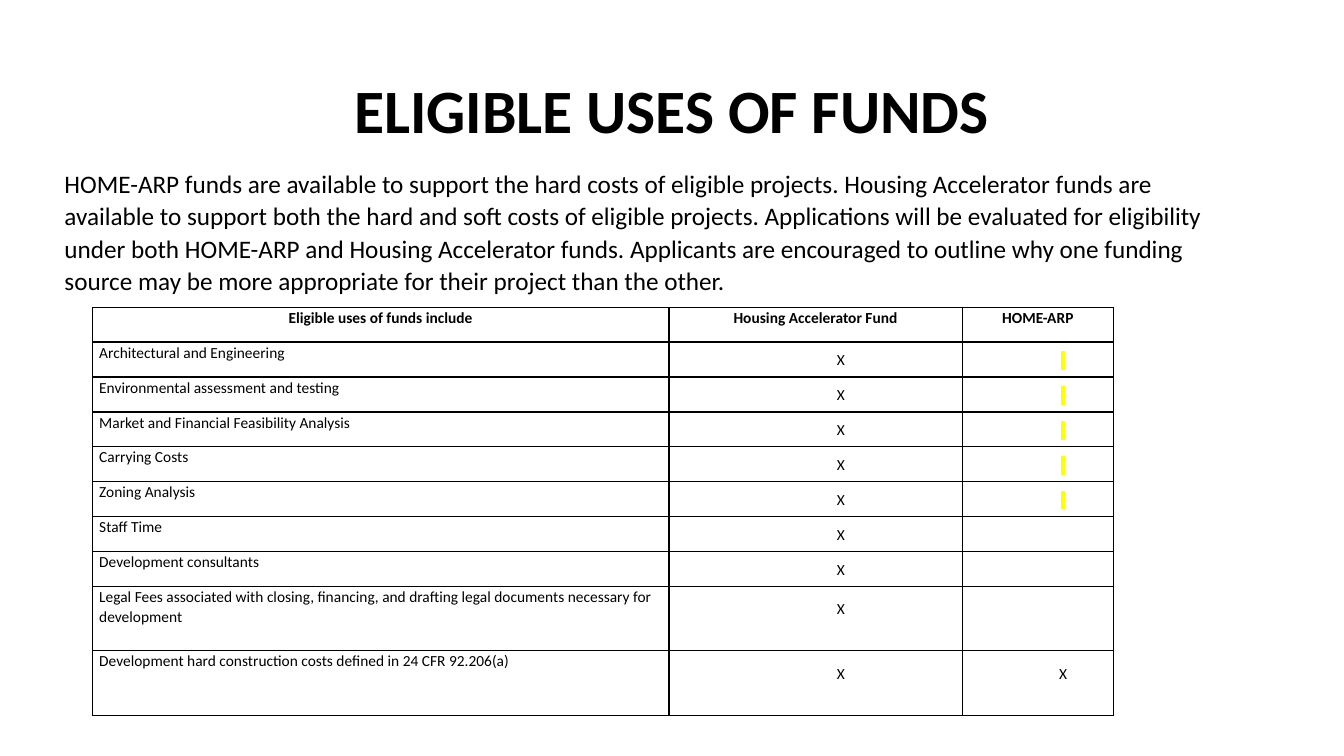
from dataclasses import dataclass

from lxml.etree import SubElement
from pptx import Presentation
from pptx.dml.color import RGBColor as RGB
from pptx.enum.text import MSO_ANCHOR as Anchor
from pptx.enum.text import MSO_AUTO_SIZE as AutoSize
from pptx.enum.text import PP_ALIGN as Align
from pptx.oxml import parse_xml
from pptx.oxml.ns import nsdecls, qn
from pptx.util import Cm, Pt


@dataclass(frozen=True)
class Theme:
    font: str = "Calibri"
    ink: str = "000000"
    mark: str = "FFFF00"
    title: float = 44
    body: float = 18
    cell: float = 11
    border: float = 1
    leading: float = 1.07


@dataclass(frozen=True)
class Use:
    name: str
    home_arp: str = ""
    tall: bool = False


THEME = Theme()
TITLE = "ELIGIBLE USES OF FUNDS"
INTRO = (
    "HOME-ARP funds are available to support the hard costs of eligible projects. "
    "Housing Accelerator funds are available to support both the hard and soft costs "
    "of eligible projects. Applications will be evaluated for eligibility under both "
    "HOME-ARP and Housing Accelerator funds. Applicants are encouraged to outline why "
    "one funding source may be more appropriate for their project than the other."
)
HEADERS = ("Eligible uses of funds include", "Housing Accelerator Fund", "HOME-ARP")
MARK = " "  # no-break space that carries the highlight
USES = (
    Use("Architectural and Engineering", MARK),
    Use("Environmental assessment and testing", MARK),
    Use("Market and Financial Feasibility Analysis", MARK),
    Use("Carrying Costs", MARK),
    Use("Zoning Analysis", MARK),
    Use("Staff Time"),
    Use("Development consultants"),
    Use("Legal Fees associated with closing, financing, and drafting legal "
        "documents necessary for development", tall=True),
    Use("Development hard construction costs defined in 24 CFR 92.206(a)", "X", True),
)
COL_WIDTHS = (Cm(14.53), Cm(7.39), Cm(3.81))
ROW, TALL_ROW = Cm(0.88), Cm(1.62)
CELL_INSET, X_INDENT, TALL_INSET = Cm(0.17), Cm(1.27), Cm(0.5)


def apply(obj, formats: dict) -> None:
    for name, value in formats.items():
        setattr(obj, name, value)


def write(tf, text: str, size: float, bold: bool = False, **para):
    """Fill a text frame with one formatted paragraph and return it."""
    p = tf.paragraphs[0]
    apply(p, {"line_spacing": THEME.leading, "space_before": Pt(0), **para})
    r = p.add_run()
    r.text = text
    apply(r.font, {"name": THEME.font, "size": Pt(size), "bold": bold})
    r.font.color.rgb = RGB.from_string(THEME.ink)
    return p


def highlight(p) -> None:
    fill = p.runs[0].font._element.find(qn("a:solidFill"))
    fill.addnext(parse_xml(
        f'<a:highlight {nsdecls("a")}><a:srgbClr val="{THEME.mark}"/></a:highlight>'))


def draw_borders(cell) -> None:
    tc_pr = cell._tc.get_or_add_tcPr()
    for i, side in enumerate(("lnL", "lnR", "lnT", "lnB")):
        tc_pr.insert(i, parse_xml(
            f'<a:{side} {nsdecls("a")} w="{Pt(THEME.border)}"><a:solidFill>'
            f'<a:srgbClr val="{THEME.ink}"/></a:solidFill></a:{side}>'))


def place(sp, left: float, top: float, width: float, height: float, anchor):
    """Move a placeholder and return its text frame."""
    apply(sp, {"left": Cm(left), "top": Cm(top), "width": Cm(width), "height": Cm(height)})
    tf = sp.text_frame
    apply(tf, {"word_wrap": True, "auto_size": AutoSize.NONE, "vertical_anchor": anchor})
    return tf


def draw_mark(cell, text: str, tall: bool) -> None:
    """Put an indented, centred entry in a fund column."""
    if not text:
        return
    apply(cell, {"vertical_anchor": Anchor.MIDDLE,
                 "margin_bottom": TALL_INSET if tall else 0})
    p = write(cell.text_frame, text, THEME.cell, alignment=Align.CENTER)
    p._p.get_or_add_pPr().set("marL", str(X_INDENT))
    if text == MARK:
        highlight(p)


def draw_table(s) -> None:
    heights = [ROW] + [TALL_ROW if use.tall else ROW for use in USES]
    table = s.shapes.add_table(len(heights), len(COL_WIDTHS), Cm(2.33), Cm(7.74),
                               sum(COL_WIDTHS), sum(heights)).table
    apply(table, {"first_row": False, "horz_banding": False})
    for col, width in zip(table.columns, COL_WIDTHS):
        col.width = width
    for row, height in zip(table.rows, heights):
        row.height = height

    # Plain bordered grid
    for cell in table.iter_cells():
        apply(cell, {"margin_left": CELL_INSET, "margin_right": CELL_INSET,
                     "margin_top": 0, "margin_bottom": 0})
        cell.fill.background()
        draw_borders(cell)

    # Header and uses
    for j, header in enumerate(HEADERS):
        write(table.cell(0, j).text_frame, header, THEME.cell, True,
              alignment=Align.CENTER)
    for i, use in enumerate(USES, start=1):
        write(table.cell(i, 0).text_frame, use.name, THEME.cell)
        draw_mark(table.cell(i, 1), "X", use.tall)
        draw_mark(table.cell(i, 2), use.home_arp, use.tall)


def main() -> None:
    prs = Presentation()
    apply(prs, {"slide_width": Cm(33.87), "slide_height": Cm(19.05)})
    s = prs.slides.add_slide(prs.slide_layouts[1])

    # Title
    tf = place(s.shapes.title, 2.33, 1.01, 29.21, 3.68, Anchor.MIDDLE)
    write(tf, TITLE, THEME.title, True, alignment=Align.CENTER, line_spacing=0.9)

    # Introduction, without a bullet
    tf = place(s.placeholders[1], 1.37, 4.06, 29.21, 12.09, Anchor.TOP)
    p = write(tf, INTRO, THEME.body, alignment=Align.LEFT, space_after=Pt(8))
    p_pr = p._p.get_or_add_pPr()
    for name in ("marL", "indent"):
        p_pr.set(name, "0")
    SubElement(p_pr, qn("a:buNone"))

    # Funding table
    draw_table(s)
    prs.save("out.pptx")


if __name__ == "__main__":
    main()
